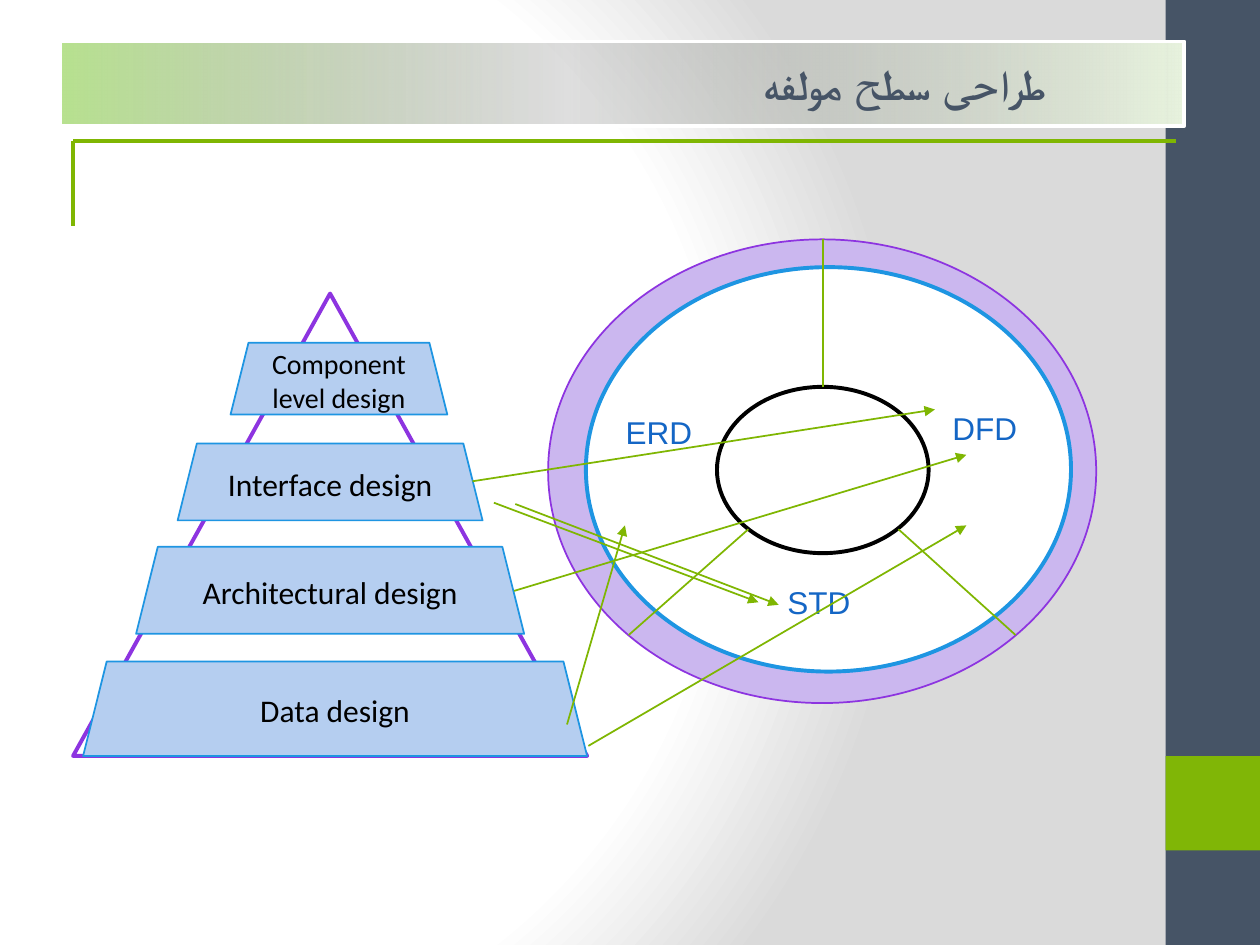
from lxml import etree
from pptx import Presentation
from pptx.dml.color import RGBColor
from pptx.enum.shapes import MSO_CONNECTOR, MSO_SHAPE as Preset
from pptx.enum.text import MSO_ANCHOR, MSO_AUTO_SIZE, PP_ALIGN as Align
from pptx.oxml.ns import qn
from pptx.util import Inches, Pt

rgb = RGBColor.from_string
GREEN, SLATE, PURPLE, BLUE, WHITE = "7FB602", "465466", "8D34E0", "1E95E2", "FFFFFF"


def set_gradient(gradient, stops):
    """Replace the content of a gradFill with (position, colour, opacity) stops."""
    for child in list(gradient):
        gradient.remove(child)
    stop_list = etree.SubElement(gradient, qn("a:gsLst"))
    for position, color, opacity in stops:
        stop = etree.SubElement(stop_list, qn("a:gs"), pos=str(position * 1000))
        color_node = etree.SubElement(stop, qn("a:srgbClr"), val=color)
        if opacity < 100:
            etree.SubElement(color_node, qn("a:alpha"), val=str(opacity * 1000))


def write_text(shape, text, size=18, font="Calibri", color="000000", bold=False,
               align=Align.CENTER, anchor=MSO_ANCHOR.MIDDLE):
    frame = shape.text_frame
    frame.word_wrap = True
    frame.vertical_anchor = anchor
    paragraph = frame.paragraphs[0]
    paragraph.alignment = align
    run = paragraph.add_run()
    run.text = text
    run.font.size = Pt(size)
    run.font.name = font
    run.font.bold = bold
    run.font.color.rgb = rgb(color)
    return paragraph


presentation = Presentation()
presentation.slide_width = Inches(10)
presentation.slide_height = Inches(7.5)
slide = presentation.slides.add_slide(presentation.slide_layouts[6])

# Background: circular gradient centred on the left
slide.background.fill.gradient()
gradient = slide.element.find(".//" + qn("a:gradFill"))
set_gradient(gradient, [(0, WHITE, 100), (75, WHITE, 100), (100, "DADADA", 100)])
circle = etree.SubElement(gradient, qn("a:path"), path="circle")
etree.SubElement(circle, qn("a:fillToRect"), l="20000", t="50000", r="100000", b="50000")

# Shapes from back to front: preset, box, fill, line colour, line width, text, text size
shapes = [
    # Side band
    (Preset.RECTANGLE, (9.25, 0, 0.75, 7.5), SLATE, None, 0, "", 0),
    (Preset.RECTANGLE, (9.25, 6, 0.75, 0.75), "80B606", None, 0, "", 0),
    # Design pyramid
    (Preset.ISOSCELES_TRIANGLE, (0.58, 2.33, 4.08, 3.67), WHITE, PURPLE, 2.25, "", 0),
    (Preset.TRAPEZOID, (0.66, 5.25, 4, 0.75), "B5CEF0", BLUE, 1, "Data design", 18),
    (Preset.TRAPEZOID, (1.08, 4.34, 3.08, 0.69), "B5CEF0", BLUE, 1, "Architectural design", 18),
    (Preset.TRAPEZOID, (1.41, 3.52, 2.42, 0.61), "B5CEF0", BLUE, 1, "Interface design", 18),
    (Preset.TRAPEZOID, (1.83, 2.72, 1.72, 0.57), "B5CEF0", BLUE, 1, "Component level design", 16),
    # Analysis model rings
    (Preset.FLOWCHART_CONNECTOR, (4.35, 1.9, 4.35, 3.68), "CBB7EF", PURPLE, 1, "", 0),
    (Preset.FLOWCHART_CONNECTOR, (4.65, 2.12, 3.85, 3.21), WHITE, BLUE, 2.25, "", 0),
    (Preset.FLOWCHART_CONNECTOR, (5.69, 3.07, 1.68, 1.32), WHITE, "000000", 2.25, "", 0),
]
for preset, box, fill, line, width, text, size in shapes:
    shape = slide.shapes.add_shape(preset, *map(Inches, box))
    shape.shadow.inherit = False
    shape.fill.solid()
    shape.fill.fore_color.rgb = rgb(fill)
    if line:
        shape.line.color.rgb = rgb(line)
        shape.line.width = Pt(width)
    else:
        shape.line.fill.background()
    if text:
        write_text(shape, text, size=size)

# Title bar, right to left
title = slide.shapes.add_shape(Preset.RECTANGLE, *map(Inches, (0.48, 0.33, 8.92, 0.67)))
title.shadow.inherit = False
title.fill.gradient()
gradient = title.element.spPr.find(qn("a:gradFill"))
set_gradient(gradient, [(0, "B8E290", 100), (45, "999999", 32), (100, "E9F4DF", 100)])
etree.SubElement(gradient, qn("a:lin"), ang="0", scaled="1")
title.line.color.rgb = rgb(WHITE)
title.line.width = Pt(2.25)
paragraph = write_text(title, "طراحی سطح مولفه", size=24, color=SLATE, bold=True,
                       align=Align.RIGHT)
properties = paragraph._p.get_or_add_pPr()
properties.set("rtl", "1")
properties.set("marL", str(Inches(1)))
properties.set("indent", "0")

# Model names inside the rings
for text, left, top, width in [("ERD", 4.74, 3.23, 0.98), ("DFD", 7.42, 3.2, 0.79),
                               ("STD", 6.02, 4.58, 0.96)]:
    label = slide.shapes.add_textbox(*map(Inches, (left, top, width, 0.4)))
    write_text(label, text, font="Arial", color="1466C5", anchor=MSO_ANCHOR.TOP)
    label.text_frame.auto_size = MSO_AUTO_SIZE.SHAPE_TO_FIT_TEXT

# Lines: start and end points, width, arrowhead
lines = [
    # Title rule
    ((0.58, 1.79, 0.58, 1.12), 2.25, False),
    ((0.58, 1.12, 9.33, 1.12), 2.25, False),
    # Ring dividers
    ((6.53, 3.07, 6.53, 1.9), 1, False),
    ((5.94, 4.2, 4.99, 5.04), 1, False),
    ((7.13, 4.2, 8.06, 5.04), 1, False),
    # From design levels to models
    ((4.5, 5.75, 4.96, 4.17), 1, True),
    ((4.67, 5.92, 7.67, 4.17), 1, True),
    ((4.08, 4.69, 7.67, 3.61), 1, True),
    ((3.75, 3.82, 7.42, 3.25), 1, True),
    ((3.92, 3.99, 6.02, 4.78), 1, True),
    ((4.09, 4, 6.18, 4.8), 1, True),
]
for points, width, arrow in lines:
    connector = slide.shapes.add_connector(MSO_CONNECTOR.STRAIGHT, *map(Inches, points))
    connector.line.color.rgb = rgb(GREEN)
    connector.line.width = Pt(width)
    shape_properties = connector._element.spPr
    if arrow:
        etree.SubElement(shape_properties.find(qn("a:ln")), qn("a:tailEnd"), type="triangle")
    etree.SubElement(shape_properties, qn("a:effectLst"))

presentation.save("out.pptx")
